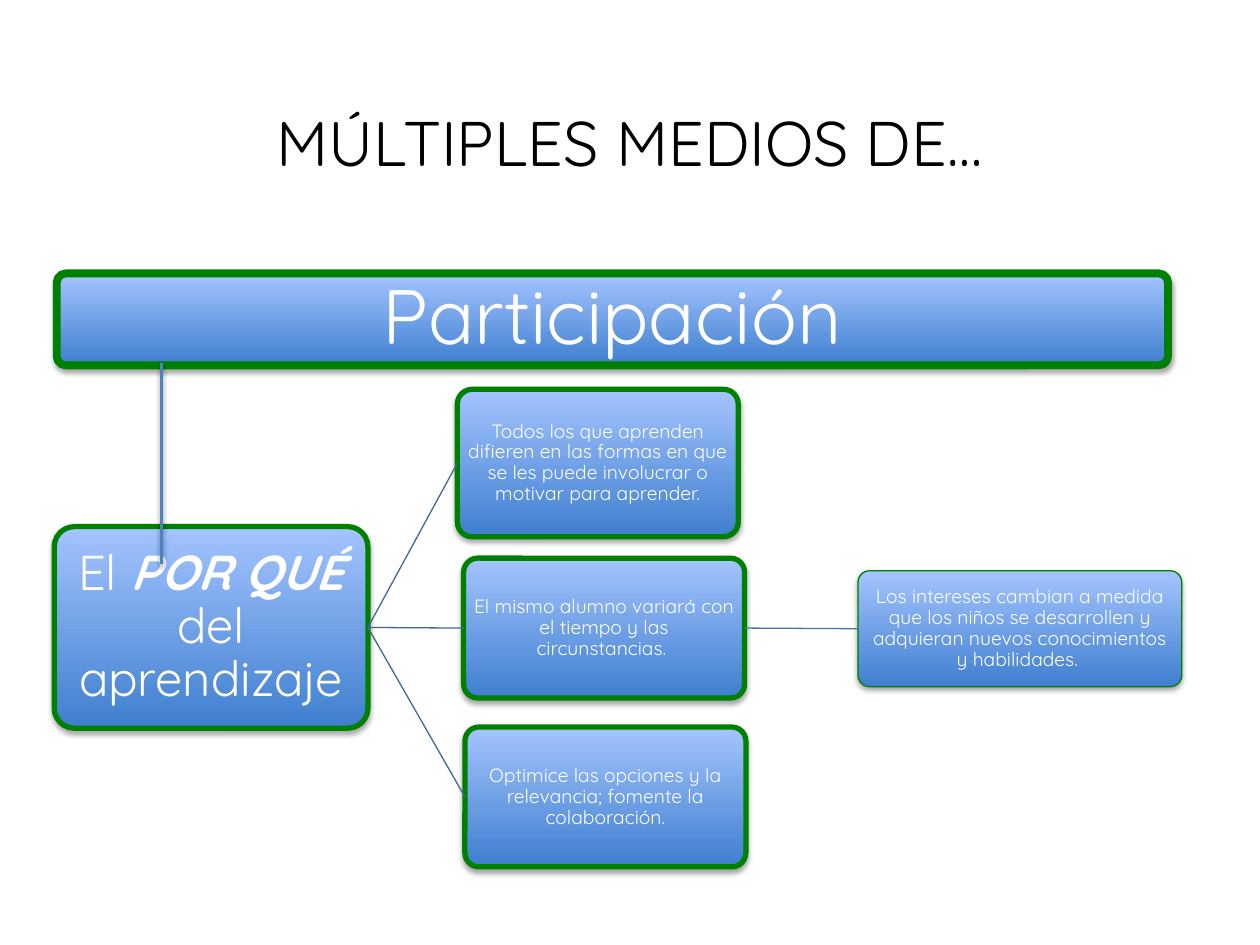
import pptx
import pptx.dml.color
import pptx.enum.shapes
import pptx.enum.text
import pptx.oxml
import pptx.util
from pptx.util import Inches

RGBColor = pptx.dml.color.RGBColor
BLACK = RGBColor(0x00, 0x00, 0x00)
WHITE = RGBColor(0xFF, 0xFF, 0xFF)
GREEN = RGBColor(0x00, 0x80, 0x00)
DEEP_BLUE = RGBColor(0x3F, 0x7F, 0xCE)
PALE_BLUE = RGBColor(0xA4, 0xC4, 0xFF)
TRUNK_BLUE = RGBColor(0x4F, 0x81, 0xBD)
BRANCH_BLUE = RGBColor(0x3F, 0x67, 0x97)
LEAF_BLUE = RGBColor(0x48, 0x75, 0xAC)
LEFT_SITE, RIGHT_SITE = 1, 3
NAMESPACE = "http://schemas.openxmlformats.org/drawingml/2006/main"


class ConceptMap:
    """Draws the title, boxes and links of a concept map on one slide."""

    def __init__(self, slide, font_name="Quicksand"):
        self.slide = slide
        self.font_name = font_name

    def set_text(self, shape, runs, size, color, inset, line_spacing):
        frame = shape.text_frame
        frame_format = {"word_wrap": True, "vertical_anchor": pptx.enum.text.MSO_ANCHOR.MIDDLE}
        for side in ("left", "top", "right", "bottom"):
            frame_format[f"margin_{side}"] = Inches(inset)
        for name, value in frame_format.items():
            setattr(frame, name, value)
        paragraph = frame.paragraphs[0]
        paragraph.alignment = pptx.enum.text.PP_ALIGN.CENTER
        paragraph.line_spacing = line_spacing
        for text, emphasis in runs:
            run = paragraph.add_run()
            run.text = text
            font_format = {"name": self.font_name, "size": pptx.util.Pt(size),
                           "bold": emphasis, "italic": emphasis}
            for name, value in font_format.items():
                setattr(run.font, name, value)
            run.font.color.rgb = color

    def set_effects(self, shape, opacity=0, distance=0):
        shadow = ""
        if opacity:
            shadow = (
                f'<a:outerShdw blurRad="{pptx.util.Pt(3.1)}" dist="{pptx.util.Pt(distance)}"'
                ' dir="5400000" rotWithShape="0"><a:srgbClr val="000000">'
                f'<a:alpha val="{opacity * 1000}"/></a:srgbClr></a:outerShdw>'
            )
        shape._element.spPr.append(pptx.oxml.parse_xml(
            f'<a:effectLst xmlns:a="{NAMESPACE}">{shadow}</a:effectLst>'))

    def title(self, text, bounds, size):
        shape = self.slide.shapes.add_textbox(*map(Inches, bounds))
        self.set_text(shape, [(text, False)], size, BLACK, 0.1, 1)

    def box(self, runs, bounds, size, border=3, inset=0.04):
        shape = self.slide.shapes.add_shape(
            pptx.enum.shapes.MSO_SHAPE.ROUNDED_RECTANGLE, *map(Inches, bounds))
        shape.adjustments[0] = 0.1
        shape.fill.gradient()
        shape.fill.gradient_angle = 90
        for stop, color in zip(shape.fill.gradient_stops, (DEEP_BLUE, PALE_BLUE)):
            stop.color.rgb = color
        shape.line.color.rgb = GREEN
        shape.line.width = pptx.util.Pt(border)
        self.set_effects(shape, 35, 1.8)
        self.set_text(shape, runs, size, WHITE, inset, 0.9)
        return shape

    def line(self, start, end, color, width):
        connector = self.slide.shapes.add_connector(
            pptx.enum.shapes.MSO_CONNECTOR.STRAIGHT, *map(Inches, start + end))
        connector.line.color.rgb = color
        connector.line.width = pptx.util.Pt(width)
        return connector

    def link(self, parent, child, color):
        connector = self.line((0, 0), (0, 0), color, 0.75)
        connector.begin_connect(parent, RIGHT_SITE)
        connector.end_connect(child, LEFT_SITE)
        self.set_effects(connector)

    def trunk(self, start, end):
        self.set_effects(self.line(start, end, TRUNK_BLUE, 2), 38, 1.6)


def main():
    presentation = pptx.Presentation()
    presentation.slide_width, presentation.slide_height = Inches(10), Inches(7.5)
    concept_map = ConceptMap(presentation.slides.add_slide(presentation.slide_layouts[6]))

    concept_map.title("MÚLTIPLES MEDIOS DE…", (0.36, 0.5, 9.27, 1.25), 36)
    concept_map.box([("Participación", False)], (0.45, 2.17, 8.82, 0.73), 44, 4.5, 0.05)
    why = concept_map.box(
        [("El ", False), ("POR QUÉ ", True), ("del aprendizaje", False)],
        (0.43, 4.18, 2.49, 1.6), 28, inset=0.07)

    reasons = [
        ("Todos los que aprenden difieren en las formas en que se les puede "
         "involucrar o motivar para aprender.", (3.63, 3.09, 2.23, 1.17)),
        ("El mismo alumno variará con el tiempo y las circunstancias. ",
         (3.68, 4.43, 2.23, 1.11)),
        ("Optimice las opciones y la relevancia; fomente la colaboración.",
         (3.69, 5.77, 2.23, 1.11)),
    ]
    reason_boxes = [concept_map.box([(text, False)], bounds, 11) for text, bounds in reasons]
    for reason_box in reason_boxes:
        concept_map.link(why, reason_box, BRANCH_BLUE)

    interests = concept_map.box(
        [("Los intereses cambian a medida que los niños se desarrollen y adquieran "
          "nuevos conocimientos y habilidades. ", False)],
        (6.81, 4.53, 2.57, 0.92), 11, 0.75)
    concept_map.link(reason_boxes[1], interests, LEAF_BLUE)
    concept_map.trunk((1.28, 2.88), (1.28, 4.48))

    presentation.save("out.pptx")


if __name__ == "__main__":
    main()
